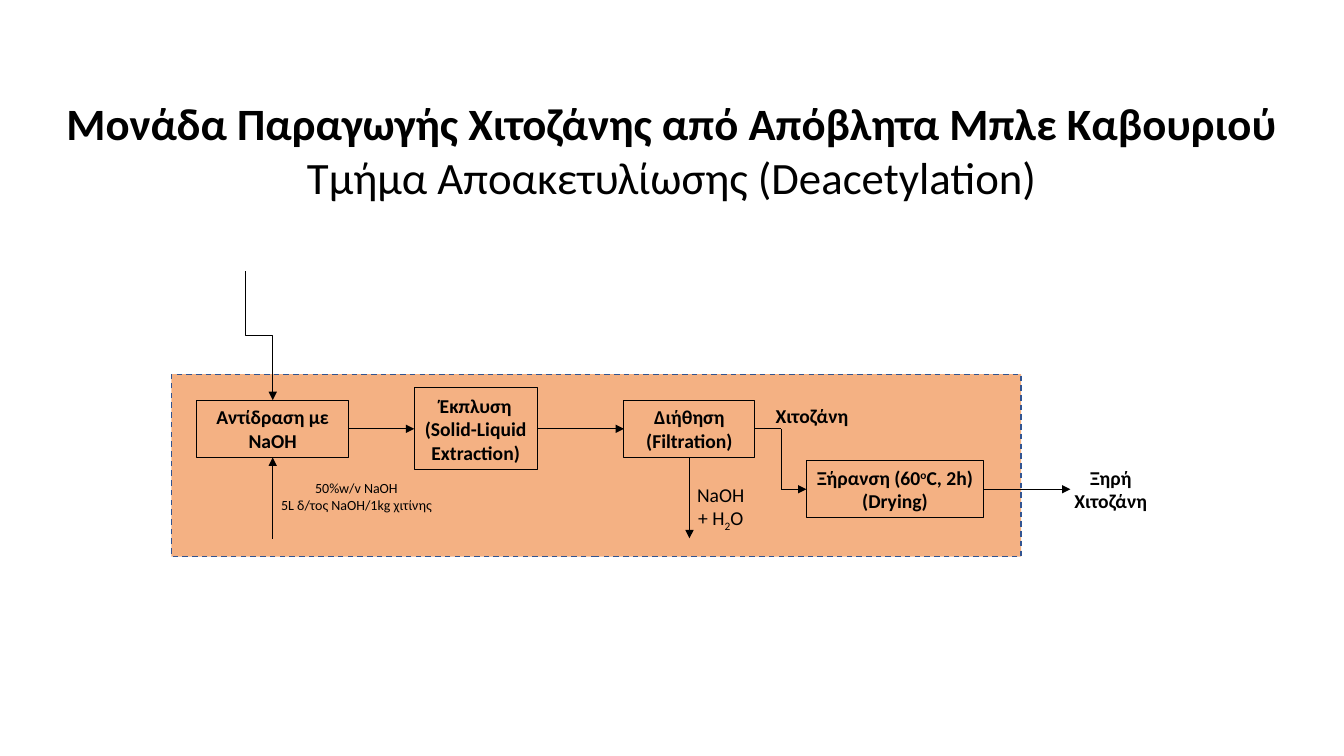
from lxml import etree
from pptx import Presentation
from pptx.dml.color import RGBColor
from pptx.enum.dml import MSO_LINE
from pptx.enum.shapes import MSO_CONNECTOR, MSO_SHAPE
from pptx.enum.text import MSO_ANCHOR, MSO_AUTO_SIZE, PP_ALIGN
from pptx.oxml.ns import qn
from pptx.util import Pt

TOP, LEFT, BOTTOM, RIGHT = range(4)


def color(hex_string):
    return RGBColor.from_string(hex_string)


def write(frame, paragraphs, size=14, bold=False, wrap=True, anchor=MSO_ANCHOR.TOP):
    """Fill a frame; a paragraph is a string or a list of (text, baseline) runs."""
    frame.word_wrap = wrap
    frame.auto_size = MSO_AUTO_SIZE.SHAPE_TO_FIT_TEXT
    frame.vertical_anchor = anchor
    for index, content in enumerate(paragraphs):
        paragraph = frame.paragraphs[0] if index == 0 else frame.add_paragraph()
        paragraph.alignment = PP_ALIGN.CENTER
        runs = [(content, 0)] if isinstance(content, str) else content
        for text, baseline in runs:
            run = paragraph.add_run()
            run.text = text
            run.font.name = Style.font
            run.font.size = Pt(size)
            run.font.bold = bold
            run.font.color.rgb = color(Style.ink)
            if baseline:
                run._r.get_or_add_rPr().set("baseline", str(baseline * 1000))


class Style:
    font = "Calibri"
    ink = "000000"
    zone_fill = "F4B183"
    zone_line = "325491"

    def __init__(self, slide):
        self.shapes = slide.shapes

    def rectangle(self, box, line, width):
        shape = self.shapes.add_shape(MSO_SHAPE.RECTANGLE, *map(Pt, box))
        shape.shadow.inherit = False
        shape.line.color.rgb = color(line)
        shape.line.width = Pt(width)
        return shape

    def zone(self, *box):
        shape = self.rectangle(box, self.zone_line, 1)
        shape.fill.solid()
        shape.fill.fore_color.rgb = color(self.zone_fill)
        shape.line.dash_style = MSO_LINE.DASH

    def step(self, box, *paragraphs):
        shape = self.rectangle(box, self.ink, 0.75)
        shape.fill.background()
        write(shape.text_frame, paragraphs, bold=True, anchor=MSO_ANCHOR.MIDDLE)
        return shape

    def label(self, box, paragraphs, **text_format):
        frame = self.shapes.add_textbox(*map(Pt, box)).text_frame
        write(frame, paragraphs, **text_format)
        return frame

    def flow(self, start, end, source=None, target=None, arrow=True,
             kind=MSO_CONNECTOR.STRAIGHT):
        """Draw a line; source and target are (step, side) pairs to join."""
        line = self.shapes.add_connector(kind, *map(Pt, (*start, *end)))
        line.line.color.rgb = color(self.ink)
        line.line.width = Pt(0.5)
        if source:
            line.begin_connect(*source)
        if target:
            line.end_connect(*target)
        if arrow:
            etree.SubElement(line.line._get_or_add_ln(), qn("a:tailEnd"), type="triangle")
        etree.SubElement(line._element.spPr, qn("a:effectLst"))
        return line

    def drop(self, start, end):
        """Draw an elbow arrow that leaves downwards: a sideways one, turned."""
        (x1, y1), (x2, y2) = start, end
        mid_x, mid_y = (x1 + x2) / 2, (y1 + y2) / 2
        half_run, half_rise = (y2 - y1) / 2, (x2 - x1) / 2
        line = self.flow((mid_x + half_run, mid_y - half_rise),
                         (mid_x - half_run, mid_y + half_rise),
                         kind=MSO_CONNECTOR.ELBOW)
        line._element.spPr.find(qn("a:xfrm")).set("rot", str(270 * 60000))


def main():
    presentation = Presentation()
    presentation.slide_width, presentation.slide_height = Pt(960), Pt(540)
    style = Style(presentation.slides.add_slide(presentation.slide_layouts[6]))

    title = style.label((0, 64.8, 960, 85), [
        "Μονάδα Παραγωγής Χιτοζάνης από Απόβλητα Μπλε Καβουριού",
        "Τμήμα Αποακετυλίωσης (Deacetylation)"], size=32, bold=True)
    title.paragraphs[1].runs[0].font.bold = False

    style.zone(122.4, 267.3, 607, 130.3)
    reaction = style.step((140.4, 285.8, 108.8, 41), "Αντίδραση με NaOH")
    washing = style.step((295.9, 277.1, 87.8, 58.4),
                         "Έκπλυση", "(Solid-Liquid Extraction)")
    filtration = style.step((445.7, 285.8, 93.6, 41), "Διήθηση (Filtration)")
    drying = style.step((576, 329, 126.7, 41),
                        [("Ξήρανση (60", 0), ("o", 30), ("C, 2h)", 0)], "(Drying)")

    main_y, drying_y, bend_x = 306.3, 349.5, 558
    style.drop((175.2, 193.9), (194.8, 285.8))
    style.flow((249.2, main_y), (295.9, main_y), (reaction, RIGHT), (washing, LEFT))
    style.flow((383.7, main_y), (445.7, main_y), (washing, RIGHT), (filtration, LEFT))
    style.flow((194.8, 385), (194.8, 326.8), target=(reaction, BOTTOM))
    style.flow((492.5, 326.8), (492.5, 384.5), source=(filtration, BOTTOM))
    style.flow((539.3, main_y), (bend_x, main_y), source=(filtration, RIGHT), arrow=False)
    style.flow((bend_x, main_y), (bend_x, drying_y), arrow=False)
    style.flow((bend_x, drying_y), (576, drying_y), target=(drying, LEFT))
    style.flow((702.7, drying_y), (764.6, drying_y), source=(drying, RIGHT))

    style.label((490.3, 341.3, 49, 41),
                ["NaOH", [("+ Η", 0), ("2", -25), ("Ο", 0)]], wrap=False)
    style.label((540, 285.1, 79.9, 24.5), ["Χιτoζάνη"], bold=True)
    style.label((749.5, 329, 87.8, 41), ["Ξηρή Χιτoζάνη"], bold=True)
    style.label((193, 339.1, 123.1, 31.7),
                ["50%w/v NaOH", "5L δ/τος NaOH/1kg χιτίνης"], size=10)

    presentation.save("out.pptx")


if __name__ == "__main__":
    main()
